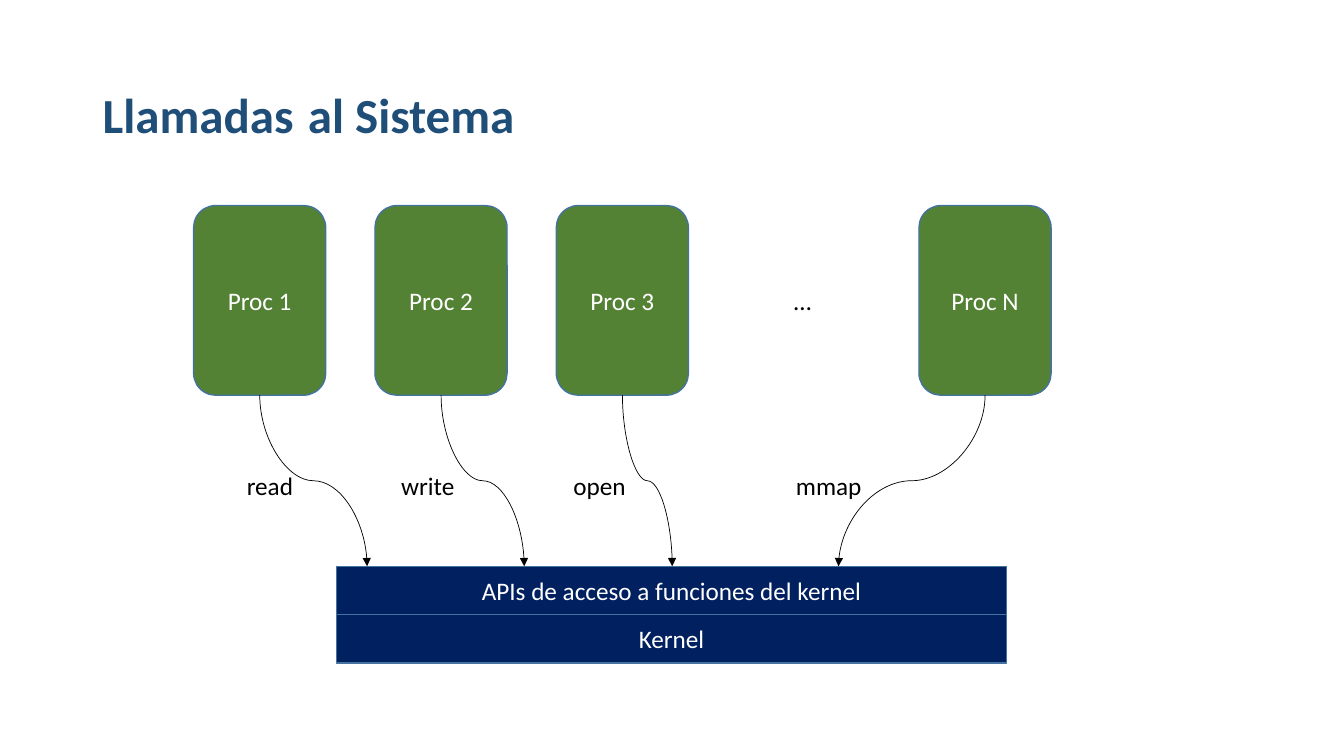
from pptx import Presentation
from pptx.dml.color import RGBColor
from pptx.enum.shapes import MSO_CONNECTOR, MSO_SHAPE
from pptx.enum.text import MSO_ANCHOR, PP_ALIGN
from pptx.oxml.ns import qn
from pptx.util import Cm, Pt
from lxml import etree

RECT, ROUNDED = MSO_SHAPE.RECTANGLE, MSO_SHAPE.ROUNDED_RECTANGLE
CURVE = MSO_CONNECTOR.CURVE
MIDDLE, TOP = MSO_ANCHOR.MIDDLE, MSO_ANCHOR.TOP
LEFT, CENTER = PP_ALIGN.LEFT, PP_ALIGN.CENTER

FONT = "Calibri"
TITLE_BLUE, NAVY, GREEN = "1F4E79", "002060", "548235"
OUTLINE, BLACK, WHITE = "43739E", "000000", "FFFFFF"

# Process slot, caller name, caller offset from its process, arrow end from kernel edge (cm)
CALLS = [
    (0, "Proc 1", "read", 1.09, 1.7, 0.77),
    (1, "Proc 2", "write", 0.41, 1.88, 4.73),
    (2, "Proc 3", "open", 0.18, 1.85, 8.46),
    (4, "Proc N", "mmap", -3.35, 2.18, 12.65),
]
ELLIPSIS_SLOT = 3
PITCH, PROC_W, PROC_H = 4.57, 3.33, 4.78


def color(value):
    return RGBColor.from_string(value)


def add_run(p, text, size=18, fill=BLACK, bold=False):
    r = p.add_run()
    r.text = text
    r.font.name, r.font.size, r.font.bold = FONT, Pt(size), bold
    r.font.color.rgb = color(fill)


def write(sp, text, align=LEFT, anchor=TOP, wrap=True, **fmt):
    tf = sp.text_frame
    tf.word_wrap, tf.vertical_anchor = wrap, anchor
    p = tf.paragraphs[0]
    p.alignment = align
    add_run(p, text, **fmt)
    return p


def text_box(s, x, y, w, h, text, **fmt):
    return write(s.shapes.add_textbox(Cm(x), Cm(y), Cm(w), Cm(h)), text, **fmt)


def block(s, kind, x, y, w, h, text, fill):
    sp = s.shapes.add_shape(kind, Cm(x), Cm(y), Cm(w), Cm(h))
    sp.shadow.inherit = False
    sp.fill.solid()
    sp.fill.fore_color.rgb = color(fill)
    sp.line.color.rgb = color(OUTLINE)
    sp.line.width = Pt(1)
    write(sp, text, align=CENTER, anchor=MIDDLE, fill=WHITE)


def curved_arrow(s, x1, y1, x2, y2):
    """S-curve leaving and arriving vertically: a sideways curve turned by 90 degrees."""
    cx, cy = (x1 + x2) / 2, (y1 + y2) / 2
    half_w, half_h = (y2 - y1) / 2, abs(x2 - x1) / 2
    side = 1 if x2 > x1 else -1
    cn = s.shapes.add_connector(CURVE, Cm(cx + side * half_w), Cm(cy - half_h),
                                Cm(cx - side * half_w), Cm(cy + half_h))
    cn.line.color.rgb = color(BLACK)
    cn.line.width = Pt(0.5)
    spPr = cn._element.spPr
    spPr.find(qn("a:xfrm")).set("rot", str((270 if side > 0 else 90) * 60000))
    etree.SubElement(spPr.find(qn("a:ln")), qn("a:tailEnd"), type="triangle")
    etree.SubElement(spPr, qn("a:effectLst"))


def title(s, x, y, w, h):
    p = text_box(s, x, y, w, h, "Llamadas", anchor=MIDDLE, size=35, fill=TITLE_BLUE, bold=True)
    p.line_spacing = 0.9
    add_run(p, " ", size=44)
    add_run(p, "al Sistema", size=35, fill=TITLE_BLUE, bold=True)


def kernel(s, x, y, w, h):
    row = h / 2
    for i, text in ((1, "Kernel"), (0, "APIs de acceso a funciones del kernel")):
        block(s, RECT, x, y + i * row, w, row, text, NAVY)


def processes(s, x, y):
    for slot, name, *_ in CALLS:
        block(s, ROUNDED, x + slot * PITCH, y, PROC_W, PROC_H, name, GREEN)
    text_box(s, x + ELLIPSIS_SLOT * PITCH + 1.17, y + 1.88, 0.97, 1.02, "…", wrap=False)


def system_calls(s, x, y, kernel_x, kernel_y):
    for slot, _, call, offset, width, end in CALLS:
        left = x + slot * PITCH
        curved_arrow(s, left + PROC_W / 2, y, kernel_x + end, kernel_y)
        text_box(s, left + offset, y + 1.77, width, 1.02, call, wrap=False)


def main():
    prs = Presentation()
    prs.slide_width, prs.slide_height = Cm(33.87), Cm(19.05)
    s = prs.slides.add_slide(prs.slide_layouts[6])
    proc_x, proc_y = 4.88, 5.18
    kernel_x, kernel_y = 8.48, 14.27

    title(s, 2.34, 1.02, 29.21, 3.68)
    kernel(s, kernel_x, kernel_y, 16.89, 2.44)
    processes(s, proc_x, proc_y)
    system_calls(s, proc_x, proc_y + PROC_H, kernel_x, kernel_y)
    prs.save("out.pptx")


if __name__ == "__main__":
    main()
